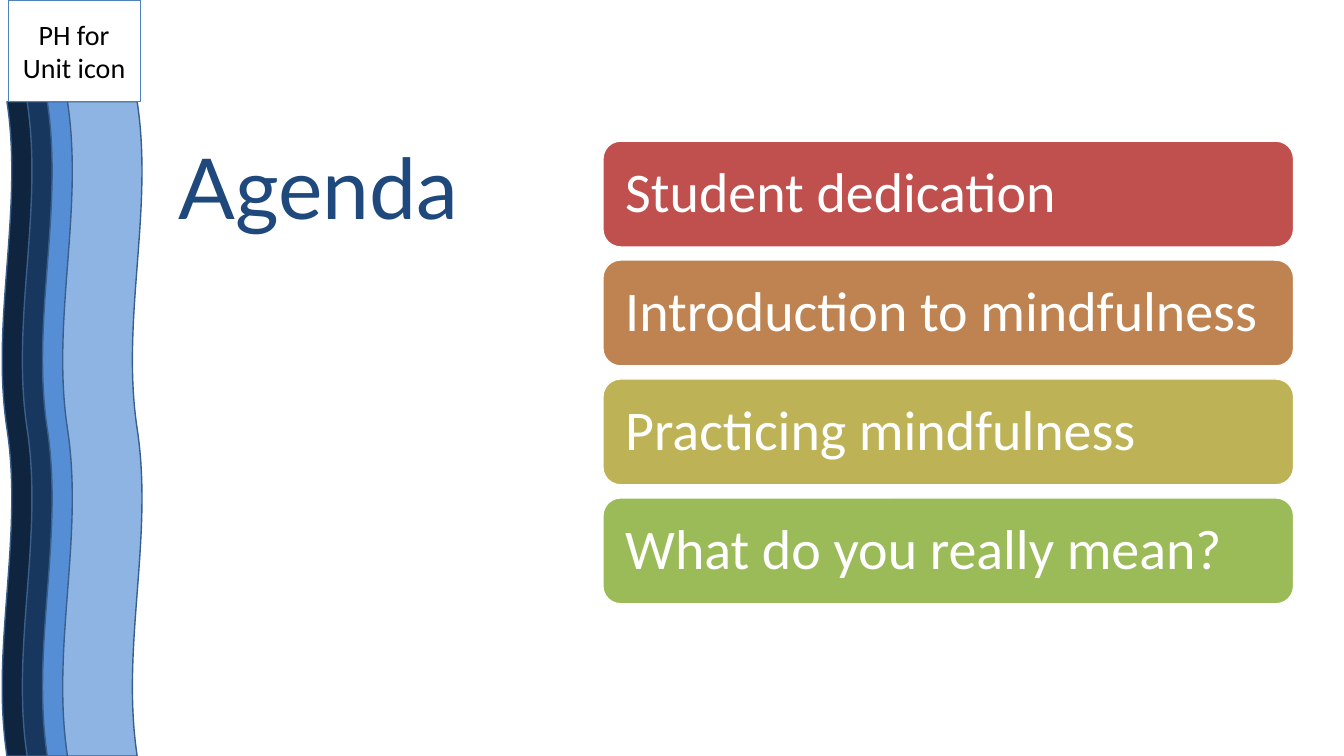
from pptx import Presentation
from pptx.dml.color import RGBColor
from pptx.enum.shapes import MSO_SHAPE
from pptx.enum.text import MSO_ANCHOR, PP_ALIGN
from pptx.util import Inches, Pt

DOUBLE_WAVE = MSO_SHAPE.DOUBLE_WAVE
RECTANGLE = MSO_SHAPE.RECTANGLE
ROUNDED = MSO_SHAPE.ROUNDED_RECTANGLE
MIDDLE, TOP = MSO_ANCHOR.MIDDLE, MSO_ANCHOR.TOP
CENTER, LEFT = PP_ALIGN.CENTER, PP_ALIGN.LEFT

WHITE = RGBColor(0xFF, 0xFF, 0xFF)
BLACK = RGBColor(0x00, 0x00, 0x00)
TITLE_BLUE = RGBColor(0x1F, 0x49, 0x7D)
ICON_EDGE = RGBColor(0x4F, 0x81, 0xBD)
WAVE_EDGE = RGBColor(0x3A, 0x5F, 0x8C)
WAVE_FILLS = [
    RGBColor(0x0F, 0x24, 0x3E),
    RGBColor(0x17, 0x37, 0x5E),
    RGBColor(0x55, 0x8E, 0xD5),
    RGBColor(0x8E, 0xB4, 0xE3),
]
AGENDA = [
    ("Student dedication", RGBColor(0xC0, 0x50, 0x4D)),
    ("Introduction to mindfulness", RGBColor(0xBE, 0x83, 0x51)),
    ("Practicing mindfulness", RGBColor(0xBD, 0xB2, 0x55)),
    ("What do you really mean?", RGBColor(0x9B, 0xBB, 0x59)),
]

PAGE_WIDTH, PAGE_HEIGHT = 13.33, 7.5
WAVE_LEFT, WAVE_TOP, WAVE_STEP = -2.83, 3.86, 0.2
WAVE_LENGTH, WAVE_DEPTH = 6.49, 0.79
BAR_LEFT, BAR_TOP, BAR_STEP = 5.98, 1.4, 1.18
BAR_WIDTH, BAR_HEIGHT, BAR_INSET = 6.85, 1.05, 0.17


def add_panel(page, kind, area, fill, edge, edge_width):
    """Add a preset shape, unfilled when fill is None."""
    panel = page.shapes.add_shape(kind, *map(Inches, area))
    panel.shadow.inherit = False
    if fill is None:
        panel.fill.background()
    else:
        panel.fill.solid()
        panel.fill.fore_color.rgb = fill
    panel.line.color.rgb = edge
    panel.line.width = Pt(edge_width)
    return panel


def write_text(box, text, font_name, size, color, anchor, align, spacing=1.0):
    """Put one styled paragraph into a box."""
    frame = box.text_frame
    frame.text = text
    frame.word_wrap = True
    frame.vertical_anchor = anchor
    para = frame.paragraphs[0]
    para.alignment = align
    para.line_spacing = spacing
    font = para.runs[0].font
    font.name = font_name
    font.size = Pt(size)
    font.color.rgb = color


def add_waves(page):
    """Stack the upright wave bands along the left edge."""
    for column, fill in enumerate(WAVE_FILLS):
        area = (WAVE_LEFT + column * WAVE_STEP, WAVE_TOP, WAVE_LENGTH, WAVE_DEPTH)
        wave = add_panel(page, DOUBLE_WAVE, area, fill, WAVE_EDGE, 1)
        wave.rotation = 270


def add_icon_box(page):
    """Add the box that reserves space for the unit icon."""
    box = add_panel(page, RECTANGLE, (0.08, 0, 1.31, 1.01), None, ICON_EDGE, 0.75)
    write_text(box, "PH for Unit icon", "Calibri", 20, BLACK, MIDDLE, CENTER)


def add_title(page):
    """Add the slide heading."""
    box = page.shapes.add_textbox(*map(Inches, (1.67, 1.41, 3.07, 5.28)))
    write_text(box, "Agenda", "Lato", 60, TITLE_BLUE, TOP, LEFT, 0.9)


def add_agenda_bar(page, row, text, fill):
    """Add one agenda item on its row."""
    area = (BAR_LEFT, BAR_TOP + row * BAR_STEP, BAR_WIDTH, BAR_HEIGHT)
    bar = add_panel(page, ROUNDED, area, fill, WHITE, 1)
    frame = bar.text_frame
    frame.margin_left = frame.margin_right = Inches(BAR_INSET)
    frame.margin_top = frame.margin_bottom = Inches(BAR_INSET)
    write_text(bar, text, "Calibri", 40, WHITE, MIDDLE, LEFT, 0.9)


def main():
    """Build and save the agenda slide."""
    deck = Presentation()
    deck.slide_width = Inches(PAGE_WIDTH)
    deck.slide_height = Inches(PAGE_HEIGHT)
    page = deck.slides.add_slide(deck.slide_layouts[6])
    add_waves(page)
    add_icon_box(page)
    add_title(page)
    for row, (text, fill) in enumerate(AGENDA):
        add_agenda_bar(page, row, text, fill)
    deck.save("out.pptx")


if __name__ == "__main__":
    main()
